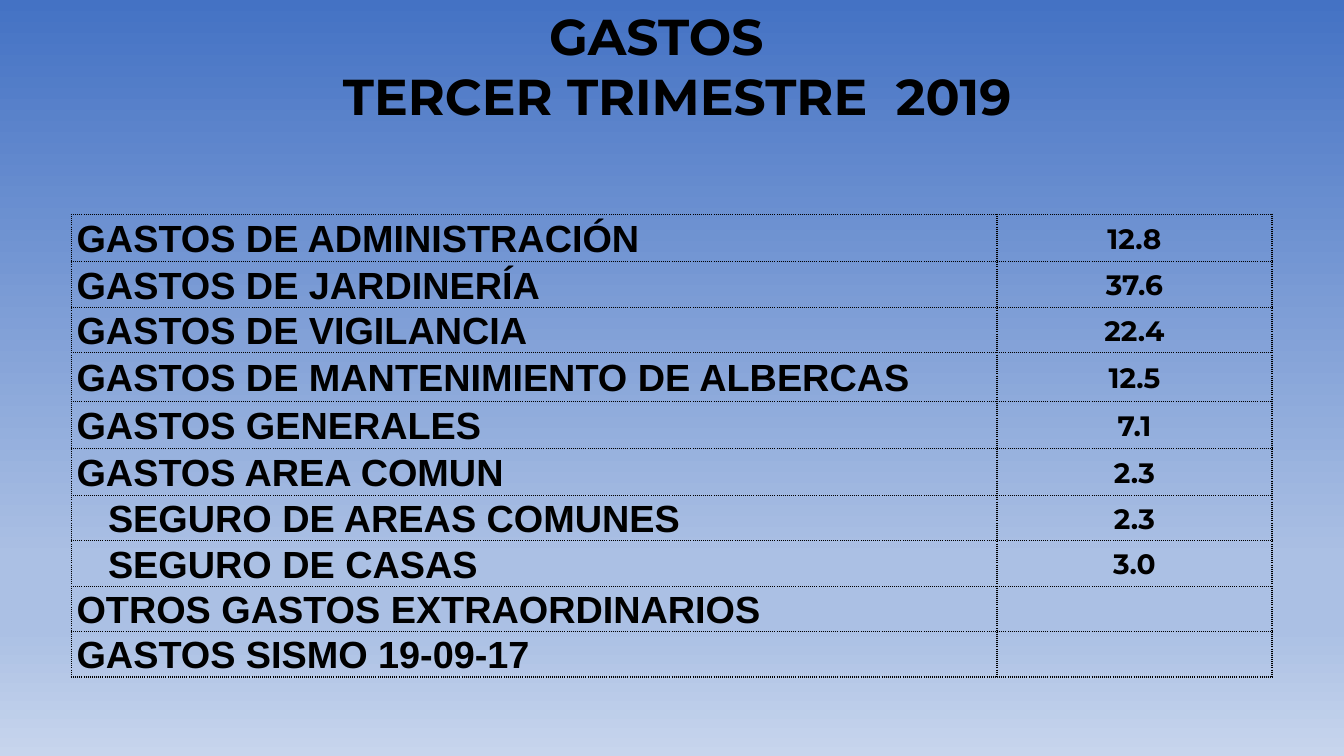
from copy import deepcopy

from lxml import etree
from pptx import Presentation
from pptx.dml.color import RGBColor
from pptx.enum.text import MSO_ANCHOR, MSO_AUTO_SIZE, PP_ALIGN
from pptx.oxml.ns import qn
from pptx.util import Pt

CENTER = PP_ALIGN.CENTER
LEFT = PP_ALIGN.LEFT
TOP = MSO_ANCHOR.TOP
MIDDLE = MSO_ANCHOR.MIDDLE
NO_AUTO_SIZE = MSO_AUTO_SIZE.NONE

BLACK = RGBColor(0x00, 0x00, 0x00)
DEEP_BLUE = RGBColor(0x44, 0x72, 0xC4)
SOFT_BLUE = RGBColor(0xAB, 0xC0, 0xE4)
PALE_BLUE = RGBColor(0xC7, 0xD5, 0xED)

BACKGROUND_STOPS = [(0, DEEP_BLUE), (0.74, SOFT_BLUE), (0.83, SOFT_BLUE), (1, PALE_BLUE)]
TITLE_OFFSET = 30
CELL_INSET = 3.6
SUBITEM_INDENT = 22.5
COLUMN_WIDTHS = [661, 196.5]
EXPENSES = [
    ("GASTOS DE ADMINISTRACIÓN", "12.8", 0, 33.8),
    ("GASTOS DE JARDINERÍA", "37.6", 0, 32.2),
    ("GASTOS DE VIGILANCIA", "22.4", 0, 32.4),
    ("GASTOS DE MANTENIMIENTO DE ALBERCAS", "12.5", 0, 35),
    ("GASTOS GENERALES", "7.1", 0, 33.6),
    ("GASTOS AREA COMUN", "2.3", 0, 33.6),
    ("SEGURO DE AREAS COMUNES", "2.3", 1, 32.4),
    ("SEGURO DE CASAS", "3.0", 1, 32.4),
    ("OTROS GASTOS EXTRAORDINARIOS", "", 0, 32.4),
    ("GASTOS SISMO 19-09-17", "", 0, 32.4),
]


def write_text(paragraph, text, font="Montserrat", size=36, align=CENTER, spacing=1.0):
    """Write one bold black run into a paragraph."""
    paragraph.alignment = align
    paragraph.line_spacing = spacing
    run = paragraph.add_run()
    run.text = text
    run.font.name = font
    run.font.size = Pt(size)
    run.font.bold = True
    run.font.color.rgb = BLACK


def paint_background(slide):
    """Fill the slide with the vertical blue gradient."""
    fill = slide.background.fill
    fill.gradient()
    fill.gradient_angle = 270
    stop_list = slide.element.find(".//" + qn("a:gsLst"))
    while len(stop_list) < len(BACKGROUND_STOPS):
        stop_list.append(deepcopy(stop_list[0]))
    for stop, (position, color) in zip(fill.gradient_stops, BACKGROUND_STOPS):
        stop.position = position
        stop.color.rgb = color


def add_title(slide):
    """Place the two-line title, its second line indented past the first."""
    title = slide.shapes.title
    title.left, title.top, title.width, title.height = Pt(210.2), Pt(0), Pt(547.2), Pt(94.3)
    frame = title.text_frame
    frame.word_wrap = True
    frame.auto_size = NO_AUTO_SIZE
    frame.vertical_anchor = TOP
    frame.margin_left = Pt(0)
    frame.margin_right = Pt(TITLE_OFFSET)
    write_text(frame.paragraphs[0], "GASTOS")
    second_line = frame.add_paragraph()
    write_text(second_line, "TERCER TRIMESTRE  2019")
    properties = second_line._p.get_or_add_pPr()
    properties.set("marL", str(Pt(TITLE_OFFSET)))
    properties.set("indent", "0")


def draw_borders(cell):
    """Give a cell dotted borders on all four sides."""
    properties = cell._tc.get_or_add_tcPr()
    for index, side in enumerate(("a:lnL", "a:lnR", "a:lnT", "a:lnB")):
        line = etree.Element(qn(side), w=str(Pt(1)))
        fill = etree.SubElement(line, qn("a:solidFill"))
        etree.SubElement(fill, qn("a:srgbClr"), val=str(BLACK))
        etree.SubElement(line, qn("a:prstDash"), val="dot")
        properties.insert(index, line)


def fill_cell(cell, text, indent=0, **text_format):
    """Format a table cell and write its text when there is any."""
    cell.fill.background()
    cell.vertical_anchor = MIDDLE
    cell.margin_left = Pt(CELL_INSET + indent)
    cell.margin_right = Pt(CELL_INSET)
    cell.margin_top = cell.margin_bottom = Pt(0)
    draw_borders(cell)
    if text:
        write_text(cell.text_frame.paragraphs[0], text, spacing=1.07, **text_format)


def add_expense_table(slide):
    """Add the table of expenses and their percentages."""
    height = sum(expense[-1] for expense in EXPENSES)
    frame = slide.shapes.add_table(len(EXPENSES), len(COLUMN_WIDTHS), Pt(51.1), Pt(153.2),
                                   Pt(sum(COLUMN_WIDTHS)), Pt(height))
    table = frame.table
    table.first_row = table.horz_banding = False
    for column, width in zip(table.columns, COLUMN_WIDTHS):
        column.width = Pt(width)
    for row, (name, value, level, row_height) in zip(table.rows, EXPENSES):
        row.height = Pt(row_height)
        name_cell, value_cell = row.cells
        fill_cell(name_cell, name, level * SUBITEM_INDENT, font="Arial", size=27, align=LEFT)
        fill_cell(value_cell, value, size=20)


def main():
    """Build and save the presentation."""
    presentation = Presentation()
    presentation.slide_width = Pt(960)
    presentation.slide_height = Pt(540)
    slide = presentation.slides.add_slide(presentation.slide_layouts[5])
    paint_background(slide)
    add_title(slide)
    add_expense_table(slide)
    presentation.save("out.pptx")


if __name__ == "__main__":
    main()
